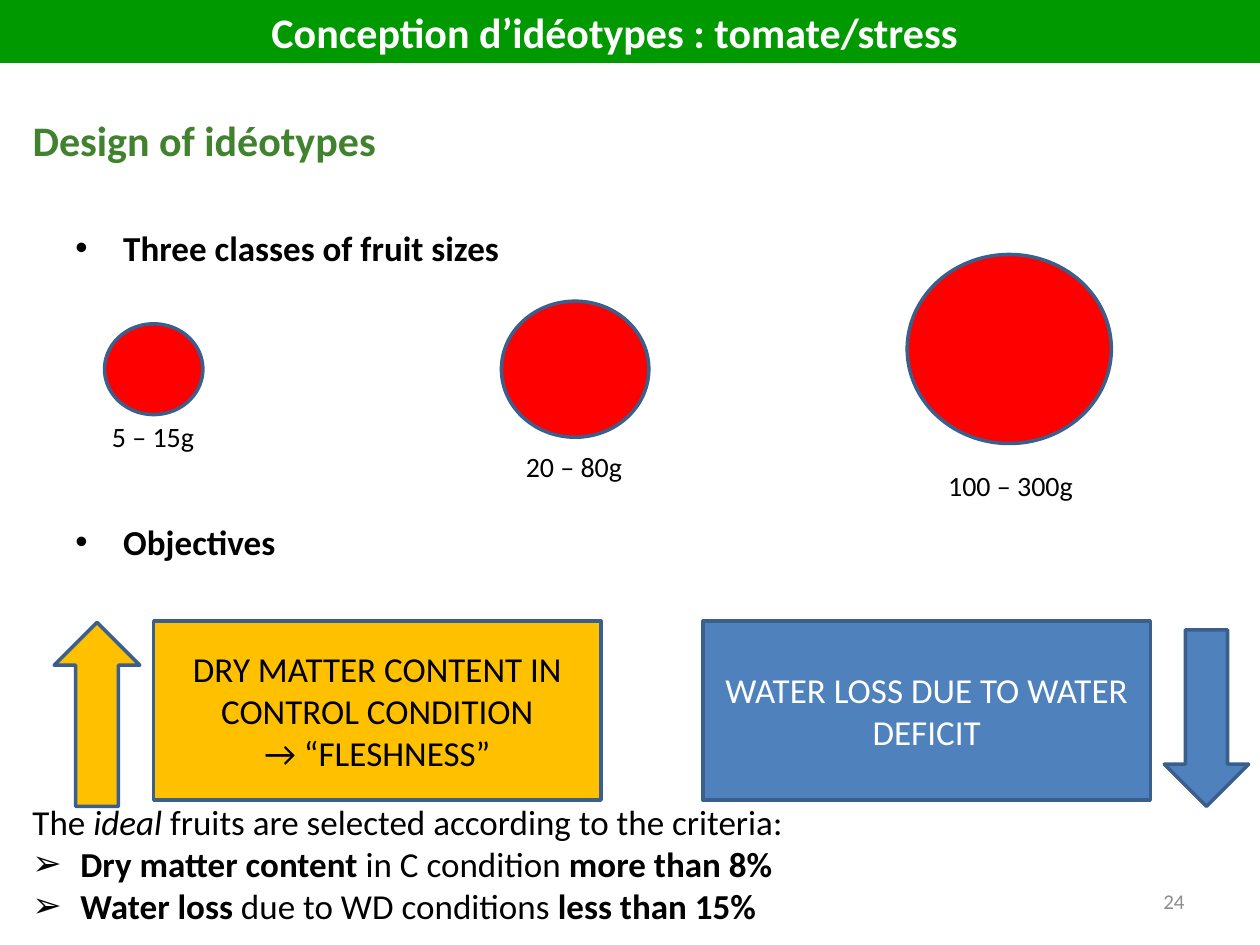
from lxml.etree import SubElement
from pptx import Presentation
from pptx.dml.color import RGBColor as RGB
from pptx.enum.shapes import MSO_SHAPE as Kind
from pptx.enum.text import MSO_ANCHOR as Anchor, PP_ALIGN as Align
from pptx.oxml.ns import qn
from pptx.util import Inches, Pt

HUE = {
    "black": "000000", "white": "FFFFFF", "gray": "8C8C8C", "green": "009900",
    "leaf": "40822E", "red": "FF0000", "gold": "FFC000", "blue": "4F81BD",
    "edge": "3A5F8C",
}


def draw(kind, box, fill, line=True):
    shape = slide.shapes.add_shape(kind, *map(Inches, box))
    shape.shadow.inherit = False
    shape.fill.solid()
    shape.fill.fore_color.rgb = RGB.from_string(HUE[fill])
    if line:
        shape.line.color.rgb = RGB.from_string(HUE["edge"])
        shape.line.width = Pt(2)
    else:
        shape.line.fill.background()
    return shape


def write(item, paras, size, hue="black", align=Align.LEFT, anchor=Anchor.TOP):
    if isinstance(item, tuple):
        item = slide.shapes.add_textbox(*map(Inches, item))
    frame = item.text_frame
    frame.word_wrap = True
    frame.vertical_anchor = anchor
    for i, (mark, parts) in enumerate(paras):
        para = frame.paragraphs[0] if i == 0 else frame.add_paragraph()
        para.alignment = align
        if mark:
            props = para._p.get_or_add_pPr()
            props.set("marL", str(Inches(0.38)))
            props.set("indent", str(-Inches(0.38)))
            SubElement(props, qn("a:buFont"), typeface="Arial")
            SubElement(props, qn("a:buChar"), char=mark)
        for text, style in parts:
            run = para.add_run()
            run.text = text
            run.font.name = "Calibri"
            run.font.size = Pt(size)
            run.font.bold = style == "b"
            run.font.italic = style == "i"
            run.font.color.rgb = RGB.from_string(HUE[hue])
    return frame


deck = Presentation()
deck.slide_width, deck.slide_height = Inches(10), Inches(7.5)
slide = deck.slides.add_slide(deck.slide_layouts[6])

heads = ["Three classes of fruit sizes", "Objectives"]
frame = write((0.5, 1.75, 9, 2.9), [("•", [(head, "b")]) for head in heads], 20)
frame.paragraphs[1].space_before = Pt(144)

fruits = [
    ((0.83, 2.57, 0.78, 0.72), "5 – 15g", (0.43, 3.28, 1.57, 0.37)),
    ((3.98, 2.39, 1.17, 1.08), "20 – 80g", (3.68, 3.52, 1.75, 0.37)),
    ((7.2, 2.02, 1.62, 1.5), "100 – 300g", (6.88, 3.67, 2.28, 0.37)),
]
for disc, mass, label in fruits:
    draw(Kind.OVAL, disc, "red")
    write(label, [("", [(mass, "")])], 16, align=Align.CENTER)

goals = [
    (1.22, "gold", "black",
     ["DRY MATTER CONTENT IN CONTROL CONDITION", "→ “FLESHNESS”"],
     Kind.UP_ARROW, (0.43, 4.94, 0.68, 1.46)),
    (5.58, "blue", "white", ["WATER LOSS DUE TO WATER DEFICIT"],
     Kind.DOWN_ARROW, (9.24, 5, 0.67, 1.4)),
]
for left, fill, ink, lines, kind, place in goals:
    card = draw(Kind.RECTANGLE, (left, 4.93, 3.55, 1.42), fill)
    write(card, [("", [(line, "")]) for line in lines], 20, ink,
          Align.CENTER, Anchor.MIDDLE)
    draw(kind, place, fill)

write((7.17, 6.95, 2.33, 0.4), [("", [("24", "")])], 12, "gray",
      Align.RIGHT, Anchor.MIDDLE)

banner = draw(Kind.RECTANGLE, (0, 0, 10, 0.5), "green", line=False)
frame = write(banner, [("", [("Conception d’idéotypes : tomate/stress", "b")])],
              24, "white", Align.CENTER)
frame.margin_right = Inches(0.34)

write((0.16, 6.3, 9.84, 1.11), [
    ("", [("The ", ""), ("ideal", "i"),
          (" fruits are selected according to the criteria:", "")]),
    ("➢", [("Dry matter content ", "b"), ("in C condition ", ""),
           ("more than 8%", "b")]),
    ("➢", [("Water loss", "b"), (" due to WD conditions ", ""),
           ("less than 15%", "b")]),
], 20)

write((0.16, 0.86, 9.52, 0.5), [("", [("Design of idéotypes", "b")])], 24, "leaf")

deck.save("out.pptx")
